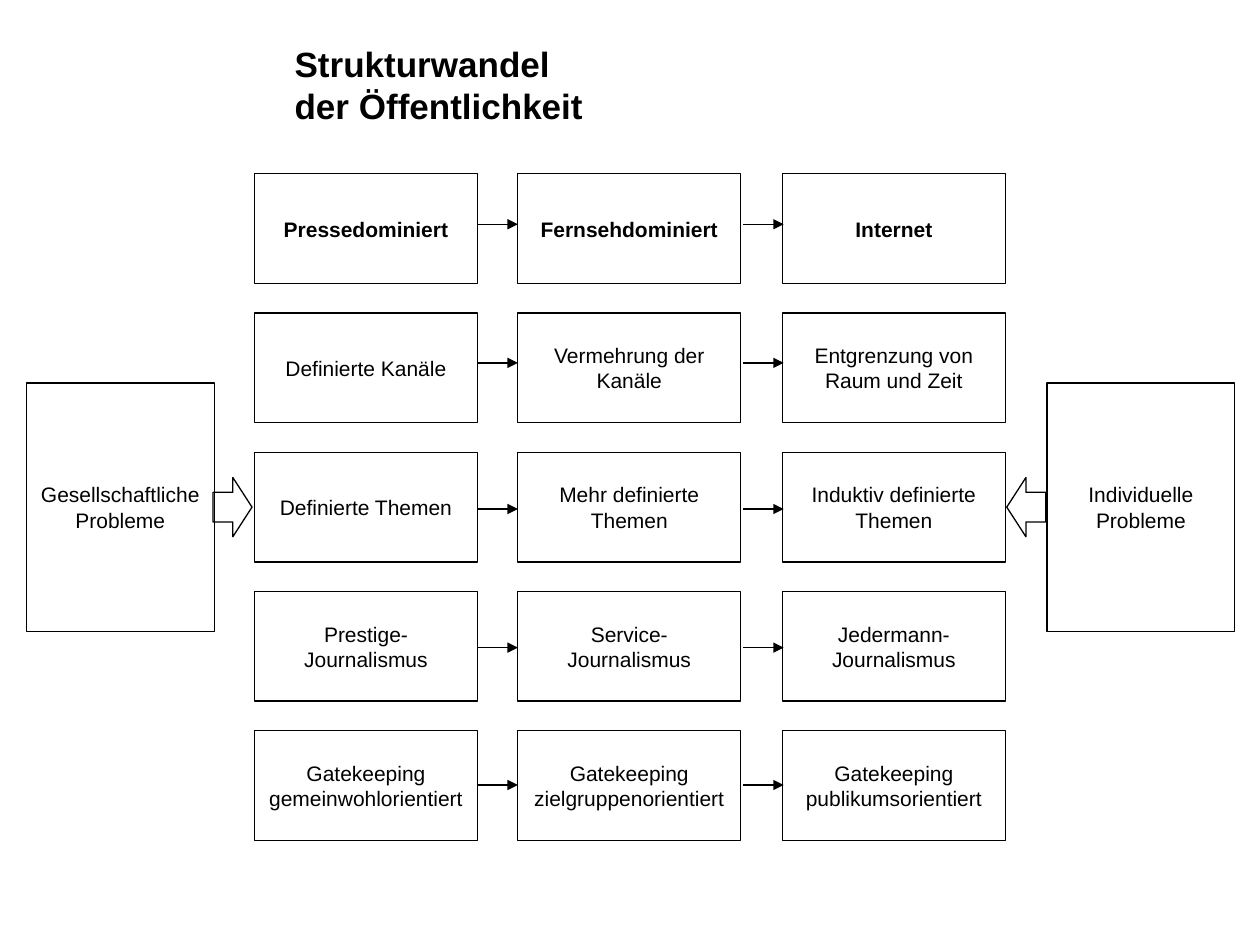
from dataclasses import dataclass

from lxml import etree
from pptx import Presentation
from pptx.dml.color import RGBColor
from pptx.enum.shapes import MSO_CONNECTOR, MSO_SHAPE
from pptx.enum.text import MSO_ANCHOR, PP_ALIGN
from pptx.oxml.ns import qn
from pptx.util import Inches, Pt

RECT = MSO_SHAPE.RECTANGLE
BLOCK_ARROW = MSO_SHAPE.RIGHT_ARROW
STRAIGHT = MSO_CONNECTOR.STRAIGHT
MIDDLE = MSO_ANCHOR.MIDDLE
CENTER = PP_ALIGN.CENTER


@dataclass
class Theme:
    font: str = "Arial"
    ink: RGBColor = RGBColor(0, 0, 0)
    title: Pt = Pt(20)
    body: Pt = Pt(12)
    line: Pt = Pt(0.75)


theme = Theme()

prs = Presentation()
prs.slide_width, prs.slide_height = Inches(10), Inches(7.5)
slide = prs.slides.add_slide(prs.slide_layouts[6])
shapes = slide.shapes


def add_run(para, text, size, bold):
    run = para.add_run()
    run.text = text
    font = run.font
    font.name, font.size, font.bold = theme.font, size, bold
    font.color.rgb = theme.ink


def add_shape(kind, left, top, width, height, text="", bold=False):
    """Add an outlined, unfilled shape with optional centred text."""
    shape = shapes.add_shape(
        kind, Inches(left), Inches(top), Inches(width), Inches(height))
    shape.shadow.inherit = False
    shape.fill.background()
    shape.line.color.rgb = theme.ink
    shape.line.width = theme.line
    if text:
        frame = shape.text_frame
        frame.word_wrap = True
        frame.vertical_anchor = MIDDLE
        para = frame.paragraphs[0]
        para.alignment = CENTER
        add_run(para, text, theme.body, bold)
    return shape


# Title
box = shapes.add_textbox(Inches(2.24), Inches(0.36), Inches(6.93), Inches(0.63))
frame = box.text_frame
frame.word_wrap = True
frame.vertical_anchor = MIDDLE
para = frame.paragraphs[0]
add_run(para, "Strukturwandel ", theme.title, True)
para.add_line_break()
add_run(para, "der Öffentlichkeit", theme.title, True)

# Grid of stages: one column per media era, one row per aspect
rows = [
    ("Pressedominiert", "Fernsehdominiert", "Internet"),
    ("Definierte Kanäle", "Vermehrung der Kanäle",
     "Entgrenzung von Raum und Zeit"),
    ("Definierte Themen", "Mehr definierte Themen",
     "Induktiv definierte Themen"),
    ("Prestige-Journalismus", "Service-Journalismus",
     "Jedermann-Journalismus"),
    ("Gatekeeping gemeinwohlorientiert", "Gatekeeping zielgruppenorientiert",
     "Gatekeeping publikumsorientiert"),
]
lefts = (2.02, 4.11, 6.21)
first_top, row_step = 1.38, 1.1
for index, labels in enumerate(rows):
    top = first_top + index * (row_step + 0.005)
    for left, label in zip(lefts, labels):
        add_shape(RECT, left, top, 1.77, 0.87, label, bold=index == 0)

# Arrows between neighbouring stages
for y in (1.78, 2.88, 4.04, 5.14, 6.23):
    for start in (3.79, 5.9):
        arrow = shapes.add_connector(
            STRAIGHT, Inches(start), Inches(y), Inches(start + 0.32), Inches(y))
        arrow.line.color.rgb = theme.ink
        arrow.line.width = theme.line
        etree.SubElement(arrow.line._get_or_add_ln(), qn("a:tailEnd"),
                         type="triangle")
        etree.SubElement(arrow._element.spPr, qn("a:effectLst"))

# Problems that feed in from both sides
sides = [
    (0.21, "Gesellschaftliche Probleme", 1.69, 0),
    (8.31, "Individuelle Probleme", 7.99, 180),
]
for left, label, arrow_left, turn in sides:
    add_shape(RECT, left, 3.04, 1.49, 1.97, label)
    block = add_shape(BLOCK_ARROW, arrow_left, 3.79, 0.31, 0.47)
    block.adjustments[1] = 0.49
    block.rotation = turn

prs.save("out.pptx")
